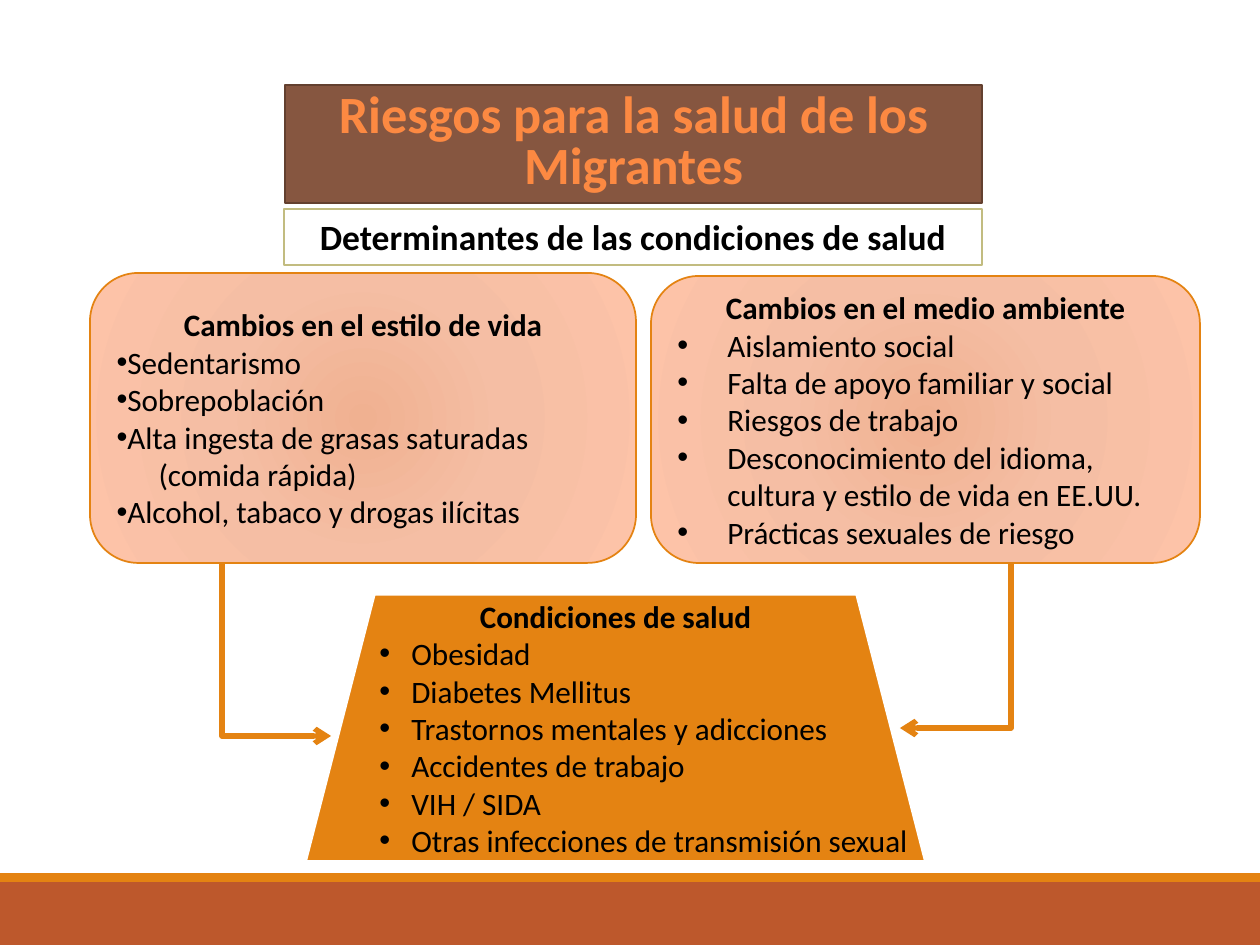
from lxml import etree
from pptx import Presentation
from pptx.dml.color import RGBColor
from pptx.enum.shapes import MSO_CONNECTOR, MSO_SHAPE
from pptx.enum.text import MSO_ANCHOR, PP_ALIGN
from pptx.oxml.ns import qn
from pptx.util import Pt

RECT, ROUNDED = MSO_SHAPE.RECTANGLE, MSO_SHAPE.ROUNDED_RECTANGLE
ELBOW = MSO_CONNECTOR.ELBOW
TOP, MIDDLE = MSO_ANCHOR.TOP, MSO_ANCHOR.MIDDLE
LEFT, CENTER = PP_ALIGN.LEFT, PP_ALIGN.CENTER

PX = 914400 / 126
WIDTH, HEIGHT = 1260, 945
FONT = "Calibri"
COLORS = {
    "rust": "BD582C", "orange": "E48312", "white": "FFFFFF", "black": "000000",
    "brown": "865640", "brown_edge": "63402F", "title": "FC8942", "olive": "C2BC80",
}
GLOW = [(0, "F0B191"), (45, "F5BEA4"), (100, "FDC3A8")]

# Content
TITLE = "Riesgos para la salud de los Migrantes"
SUBTITLE = "Determinantes de las condiciones de salud"
CONTINUATION = "(comida rápida)"
CAUSES = [
    {"box": (90, 273, 546, 290), "indent": (0, -50),
     "heading": "Cambios en el estilo de vida",
     "items": ["Sedentarismo", "Sobrepoblación", "Alta ingesta de grasas saturadas",
               CONTINUATION, "Alcohol, tabaco y drogas ilícitas"]},
    {"box": (651, 276, 549, 287), "indent": (50, -50),
     "heading": "Cambios en el medio ambiente",
     "items": ["Aislamiento social", "Falta de apoyo familiar y social",
               "Riesgos de trabajo",
               "Desconocimiento del idioma, cultura y estilo de vida en EE.UU.",
               "Prácticas sexuales de riesgo"]},
]
CONDITIONS = {
    "outline": [(305, 862), (374, 594), (857, 594), (926, 862)], "indent": (94, -32),
    "heading": "Condiciones de salud",
    "items": ["Obesidad", "Diabetes Mellitus", "Trastornos mentales y adicciones",
              "Accidentes de trabajo", "VIH / SIDA",
              "Otras infecciones de transmisión sexual"],
}
ARROWS = [((222, 563), (331, 736)), ((1011, 561), (900, 728))]


def emu(px):
    return round(px * PX)


def color(name):
    return RGBColor.from_string(COLORS[name])


def paint(shape, fill, edge=None, edge_width=1):
    shape.shadow.inherit = False
    if fill:
        shape.fill.solid()
        shape.fill.fore_color.rgb = color(fill)
    if edge:
        shape.line.color.rgb = color(edge)
        shape.line.width = Pt(edge_width)
    else:
        shape.line.fill.background()


def add_box(kind, box, *style):
    shape = slide.shapes.add_shape(kind, *map(emu, box))
    paint(shape, *style)
    return shape


def write(shape, lines, size, ink="black", anchor=MIDDLE):
    """Fill a shape; the first line is a bold centred heading."""
    frame = shape.text_frame
    frame.word_wrap = True
    frame.vertical_anchor = anchor
    frame.text = "\n".join(lines)
    for number, paragraph in enumerate(frame.paragraphs):
        paragraph.alignment = LEFT if number else CENTER
        font = paragraph.runs[0].font
        font.name, font.size, font.bold = FONT, Pt(size), number == 0
        font.color.rgb = color(ink)
    return frame.paragraphs


def write_list(shape, content):
    margin, hanging = content["indent"]
    paragraphs = write(shape, [content["heading"], *content["items"]], 17.8)
    for paragraph in paragraphs[1:]:
        props = paragraph._p.get_or_add_pPr()
        if paragraph.text == CONTINUATION:
            props.set("marL", str(emu(42)))
            props.set("indent", "0")
            continue
        props.set("marL", str(emu(margin)))
        props.set("indent", str(emu(hanging)))
        etree.SubElement(props, qn("a:buFont"), typeface="Arial")
        etree.SubElement(props, qn("a:buChar"), char="•")


def add_glow(shape):
    """Radial gradient, placed right after the shape's geometry."""
    gradient = etree.Element(qn("a:gradFill"), rotWithShape="1")
    stops = etree.SubElement(gradient, qn("a:gsLst"))
    for percent, hex_color in GLOW:
        stop = etree.SubElement(stops, qn("a:gs"), pos=str(percent * 1000))
        etree.SubElement(stop, qn("a:srgbClr"), val=hex_color)
    radial = etree.SubElement(gradient, qn("a:path"))
    radial.set("path", "circle")
    etree.SubElement(radial, qn("a:fillToRect"), {side: "100000" for side in "ltrb"})
    shape._element.spPr.find(qn("a:prstGeom")).addnext(gradient)


def add_bent_arrow(start, end):
    """Go down, then sideways: an elbow turned a quarter, bent at its far end."""
    (x1, y1), (x2, y2) = start, end
    length, breadth = y2 - y1, abs(x2 - x1)
    left = (x1 + x2 - length) / 2
    top = (y1 + y2 - breadth) / 2
    arrow = slide.shapes.add_connector(
        ELBOW, emu(left), emu(top), emu(left + length), emu(top + breadth))
    arrow.line.color.rgb = color("orange")
    arrow.line.width = Pt(3)
    props = arrow._element.spPr
    turn = props.find(qn("a:xfrm"))
    if x2 > x1:
        turn.set("rot", "16200000")
        turn.set("flipH", "1")
    else:
        turn.set("rot", "5400000")
    guides = props.find(qn("a:prstGeom")).find(qn("a:avLst"))
    etree.SubElement(guides, qn("a:gd"), name="adj1", fmla="val 100000")
    etree.SubElement(props.find(qn("a:ln")), qn("a:tailEnd"), type="arrow")
    etree.SubElement(props, qn("a:effectLst"))


prs = Presentation()
prs.slide_width, prs.slide_height = emu(WIDTH), emu(HEIGHT)
slide = prs.slides.add_slide(prs.slide_layouts[6])

# Footer bands
add_box(RECT, (0, 882, WIDTH, 63), "rust")
add_box(RECT, (0, 873, WIDTH, 9), "orange")

# Headings
subtitle = add_box(RECT, (284, 209, 698, 56), "white", "olive", 1.25)
write(subtitle, [SUBTITLE], 20.3, anchor=TOP)
title = add_box(RECT, (285, 85, 697, 118), "brown", "brown_edge", 1.25)
write(title, [TITLE], 29.9, "title")[0].line_spacing = 0.8

# Resulting health conditions
first, *others = CONDITIONS["outline"]
builder = slide.shapes.build_freeform(*first, scale=PX)
builder.add_line_segments(others, close=True)
trapezoid = builder.convert_to_shape()
paint(trapezoid, "orange", "white", 2)
write_list(trapezoid, CONDITIONS)

# Arrows from causes to conditions
for start, end in ARROWS:
    add_bent_arrow(start, end)

# Causes
for cause in CAUSES:
    card = add_box(ROUNDED, cause["box"], None, "orange", 1)
    add_glow(card)
    write_list(card, cause)

prs.save("out.pptx")
